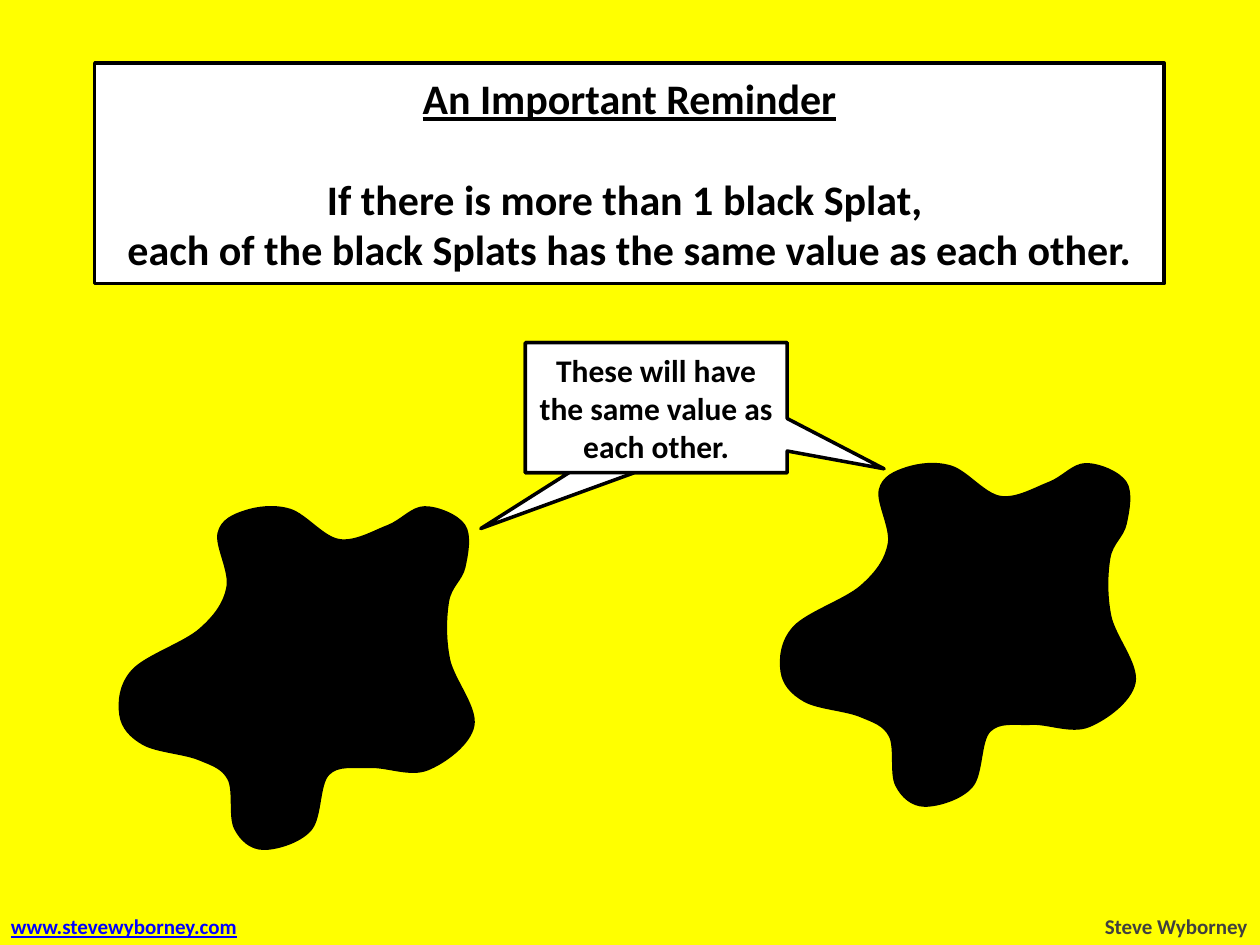
from lxml.etree import SubElement
from pptx import Presentation
from pptx.dml.color import RGBColor
from pptx.enum.shapes import MSO_SHAPE
from pptx.enum.text import MSO_ANCHOR, MSO_AUTO_SIZE, PP_ALIGN
from pptx.oxml.ns import qn
from pptx.util import Cm, Pt

YELLOW = RGBColor(0xFF, 0xFF, 0x00)
WHITE = RGBColor(0xFF, 0xFF, 0xFF)
BLACK = RGBColor(0x00, 0x00, 0x00)
GRAY = RGBColor(0x40, 0x40, 0x40)
BLUE = RGBColor(0x00, 0x00, 0xFF)
FONT = "Calibri"

TITLE = "An Important Reminder"
REMINDER = [
    "If there is more than 1 black Splat, ",
    "each of the black Splats has the same value as each other.",
]
CALLOUT = "These will have the same value as each other."
FOOTERS = [
    ("Steve Wyborney", (22, 18.29, 3.4, 0.76), PP_ALIGN.RIGHT, GRAY, False),
    ("www.stevewyborney.com", (-0.03, 18.29, 5.21, 0.76), PP_ALIGN.LEFT, BLUE, True),
]
REMINDER_BOX = (1.91, 1.27, 21.56, 4.45)
CALLOUT_BOX = (10.59, 6.91, 5.28, 2.62)
CALLOUT_TIPS = [(-0.67, 0.93), (0.87, 0.47)]
SPLAT_ORIGINS = [(2.44, 10.24), (15.77, 9.37)]
SPLAT_KNOTS = [
    (0.46, 4.75), (0, 4.17), (0.25, 3.28), (1.6, 2.46), (2.16, 1.6), (1.98, 0.51),
    (2.51, 0.08), (3.4, 0.05), (4.39, 0.66), (5.38, 0.38), (6.12, 0), (6.91, 0.36),
    (6.91, 1.19), (6.58, 1.88), (6.6, 3.05), (7.09, 4.39), (6.17, 5.26), (5.03, 5.21),
    (4.17, 5.36), (3.81, 6.48), (2.87, 6.86), (2.31, 6.45), (2.18, 5.46), (1.57, 5.05),
]


def style(sp, fill):
    sp.shadow.inherit = False
    sp.fill.solid()
    sp.fill.fore_color.rgb = fill
    sp.line.color.rgb = BLACK
    sp.line.width = Pt(2)


def add_run(p, text, size, color=BLACK, underline=False, align=PP_ALIGN.CENTER):
    p.alignment = align
    r = p.add_run()
    r.text = text
    r.font.name = FONT
    r.font.size = Pt(size)
    r.font.bold = True
    r.font.underline = underline
    r.font.color.rgb = color


def add_box(shapes, kind, box):
    sp = shapes.add_shape(kind, *map(Cm, box))
    style(sp, WHITE)
    sp.text_frame.word_wrap = True
    sp.text_frame.vertical_anchor = MSO_ANCHOR.MIDDLE
    return sp


def smooth_outline(sp):
    path = sp._element.find(".//" + qn("a:path"))
    knots = [(int(pt.get("x")), int(pt.get("y"))) for pt in path.iter(qn("a:pt"))][:-1]
    n = len(knots)
    for line in path.findall(qn("a:lnTo")):
        path.remove(line)
    close = path.find(qn("a:close"))
    for i in range(n):
        before, start, end, after = (knots[(i + k) % n] for k in (-1, 0, 1, 2))
        leave = [s + (e - b) / 6 for b, s, e in zip(before, start, end)]
        arrive = [e - (a - s) / 6 for s, e, a in zip(start, end, after)]
        curve = SubElement(path, qn("a:cubicBezTo"))
        for x, y in (leave, arrive, end):
            SubElement(curve, qn("a:pt"), x=str(round(x)), y=str(round(y)))
    path.append(close)


def add_splat(shapes, left, top):
    points = [(Cm(left + x), Cm(top + y)) for x, y in SPLAT_KNOTS]
    builder = shapes.build_freeform(*points[0])
    builder.add_line_segments(points[1:] + points[:1], close=False)
    builder.add_line_segments([], close=True)
    sp = builder.convert_to_shape()
    style(sp, BLACK)
    smooth_outline(sp)


def main():
    prs = Presentation()
    prs.slide_width, prs.slide_height = Cm(25.4), Cm(19.05)
    s = prs.slides.add_slide(prs.slide_layouts[6])
    s.background.fill.solid()
    s.background.fill.fore_color.rgb = YELLOW

    for text, box, align, color, underline in FOOTERS:
        tf = s.shapes.add_textbox(*map(Cm, box)).text_frame
        tf.word_wrap = False
        tf.auto_size = MSO_AUTO_SIZE.SHAPE_TO_FIT_TEXT
        add_run(tf.paragraphs[0], text, 12, color, underline, align)

    for left, top in SPLAT_ORIGINS:
        add_splat(s.shapes, left, top)

    tf = add_box(s.shapes, MSO_SHAPE.RECTANGLE, REMINDER_BOX).text_frame
    add_run(tf.paragraphs[0], TITLE, 24, underline=True)
    tf.paragraphs[0].space_after = Pt(29)
    for text in REMINDER:
        add_run(tf.add_paragraph(), text, 24)

    group = s.shapes.add_group_shape()
    for tip in CALLOUT_TIPS:
        sp = add_box(group.shapes, MSO_SHAPE.RECTANGULAR_CALLOUT, CALLOUT_BOX)
        sp.adjustments[0], sp.adjustments[1] = tip
    add_run(sp.text_frame.paragraphs[0], CALLOUT, 18)

    prs.save("out.pptx")


if __name__ == "__main__":
    main()
